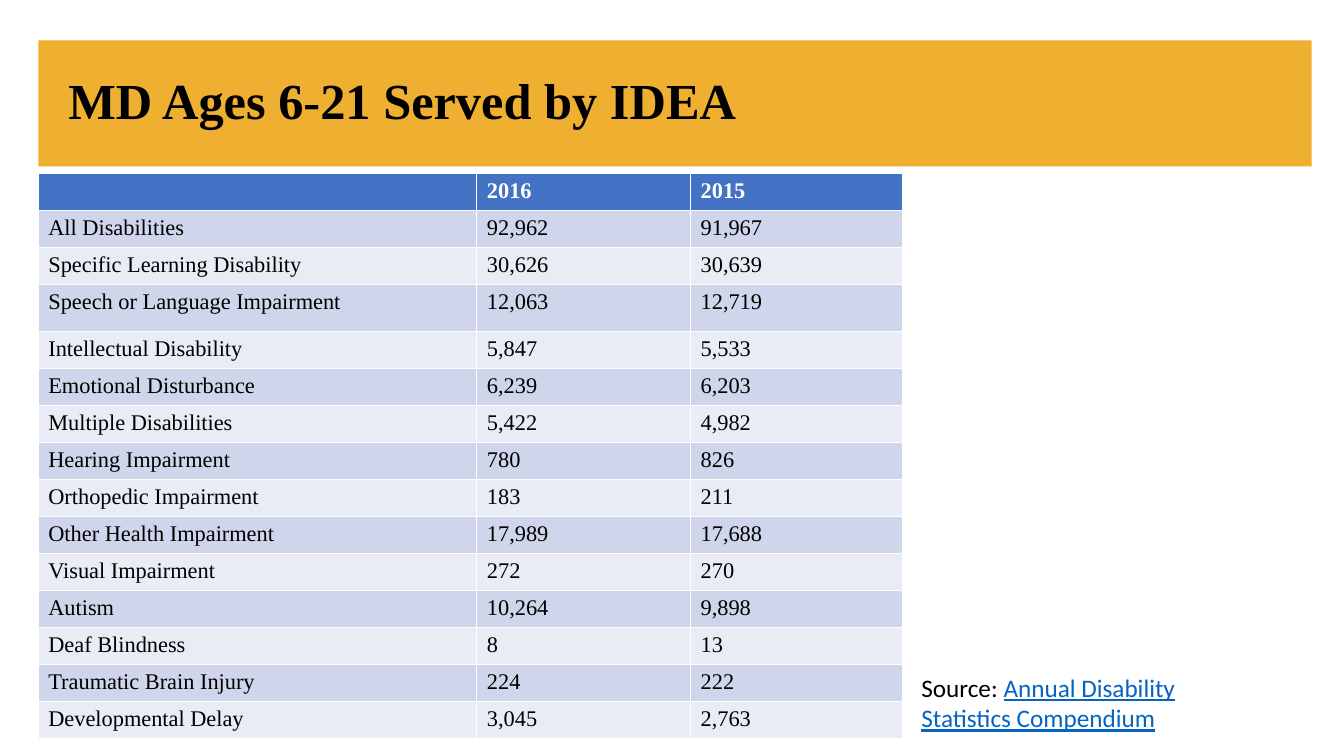
from pptx import Presentation
from pptx.dml.color import RGBColor as RGB
from pptx.enum.shapes import MSO_SHAPE as Shape
from pptx.enum.text import MSO_ANCHOR as Anchor
from pptx.oxml.xmlchemy import OxmlElement as Element
from pptx.util import Inches, Pt

GOLD = RGB(0xEF, 0xAF, 0x30)
BLUE = RGB(0x44, 0x72, 0xC4)
DARK = RGB(0xCF, 0xD5, 0xEA)
PALE = RGB(0xE9, 0xEB, 0xF5)
LINK = RGB(0x05, 0x63, 0xC1)
BLACK = RGB(0, 0, 0)
WHITE = RGB(0xFF, 0xFF, 0xFF)
SERIF = "Times New Roman"
SANS = "Calibri"

ROWS = [
    ("", "2016", "2015"),
    ("All Disabilities", "92,962", "91,967"),
    ("Specific Learning Disability", "30,626", "30,639"),
    ("Speech or Language Impairment", "12,063", "12,719"),
    ("Intellectual Disability", "5,847", "5,533"),
    ("Emotional Disturbance", "6,239", "6,203"),
    ("Multiple Disabilities", "5,422", "4,982"),
    ("Hearing Impairment", "780", "826"),
    ("Orthopedic Impairment", "183", "211"),
    ("Other Health Impairment", "17,989", "17,688"),
    ("Visual Impairment", "272", "270"),
    ("Autism", "10,264", "9,898"),
    ("Deaf Blindness", "8", "13"),
    ("Traumatic Brain Injury", "224", "222"),
    ("Developmental Delay", "3,045", "2,763"),
]
WIDTHS = [4.35, 2.12, 2.1]
HEIGHTS = [0.47 if row[0].startswith("Speech") else 0.35 for row in ROWS]


class Deck:
    def __init__(self):
        self.prs = Presentation()
        self.prs.slide_width = Inches(13.33)
        self.prs.slide_height = Inches(7.5)
        self.slide = self.prs.slides.add_slide(self.prs.slide_layouts[6])

    def style(self, run, size, face, color, bold=False, line=False):
        font = run.font
        font.size, font.name, font.bold = Pt(size), face, bold
        font.color.rgb = color
        if line:
            font.underline = True

    def bar(self, box, color):
        bar = self.slide.shapes.add_shape(Shape.RECTANGLE, *map(Inches, box))
        bar.shadow.inherit = False
        bar.fill.solid()
        bar.fill.fore_color.rgb = color
        bar.line.fill.background()

    def text(self, box, parts, anchor=Anchor.TOP, space=1.0):
        """Each part is a text followed by its style values."""
        frame = self.slide.shapes.add_textbox(*map(Inches, box)).text_frame
        frame.word_wrap = True
        frame.vertical_anchor = anchor
        para = frame.paragraphs[0]
        para.line_spacing = space
        for words, *look in parts:
            run = para.add_run()
            run.text = words
            self.style(run, *look)

    def cell(self, cell, words, fill, color, bold):
        cell.fill.solid()
        cell.fill.fore_color.rgb = fill
        cell.text_frame.text = words
        para = cell.text_frame.paragraphs[0]
        for run in para.runs:
            self.style(run, 16, SERIF, color, bold)
        if not words:
            # An empty cell needs its own text size to keep the row low
            end = Element("a:endParaRPr")
            end.set("sz", "1600")
            para._p.append(end)

    def table(self, left, top, rows, widths, heights):
        box = map(Inches, (left, top, sum(widths), sum(heights)))
        table = self.slide.shapes.add_table(len(rows), len(widths), *box).table
        for col, width in zip(table.columns, widths):
            col.width = Inches(width)
        for i, (row, height) in enumerate(zip(rows, heights)):
            table.rows[i].height = Inches(height)
            head = i == 0
            fill = BLUE if head else DARK if i % 2 else PALE
            for j, words in enumerate(row):
                self.cell(table.cell(i, j), words, fill,
                          WHITE if head else BLACK, head)


def main():
    deck = Deck()

    # Title banner
    deck.bar((0.38, 0.4, 12.63, 1.25), GOLD)
    deck.text((0.58, 0.4, 11.5, 1.25),
              [("MD Ages 6-21 Served by IDEA", 36, SERIF, BLACK, True)],
              Anchor.MIDDLE, 0.9)

    # Counts by disability
    deck.table(0.38, 1.72, ROWS, WIDTHS, HEIGHTS)

    # Source note
    deck.text((9.04, 6.62, 3.13, 0.71), [
        ("Source: ", 18, SANS, BLACK),
        ("Annual Disability Statistics Compendium", 18, SANS, LINK, False, True),
    ])

    deck.prs.save("out.pptx")


if __name__ == "__main__":
    main()
